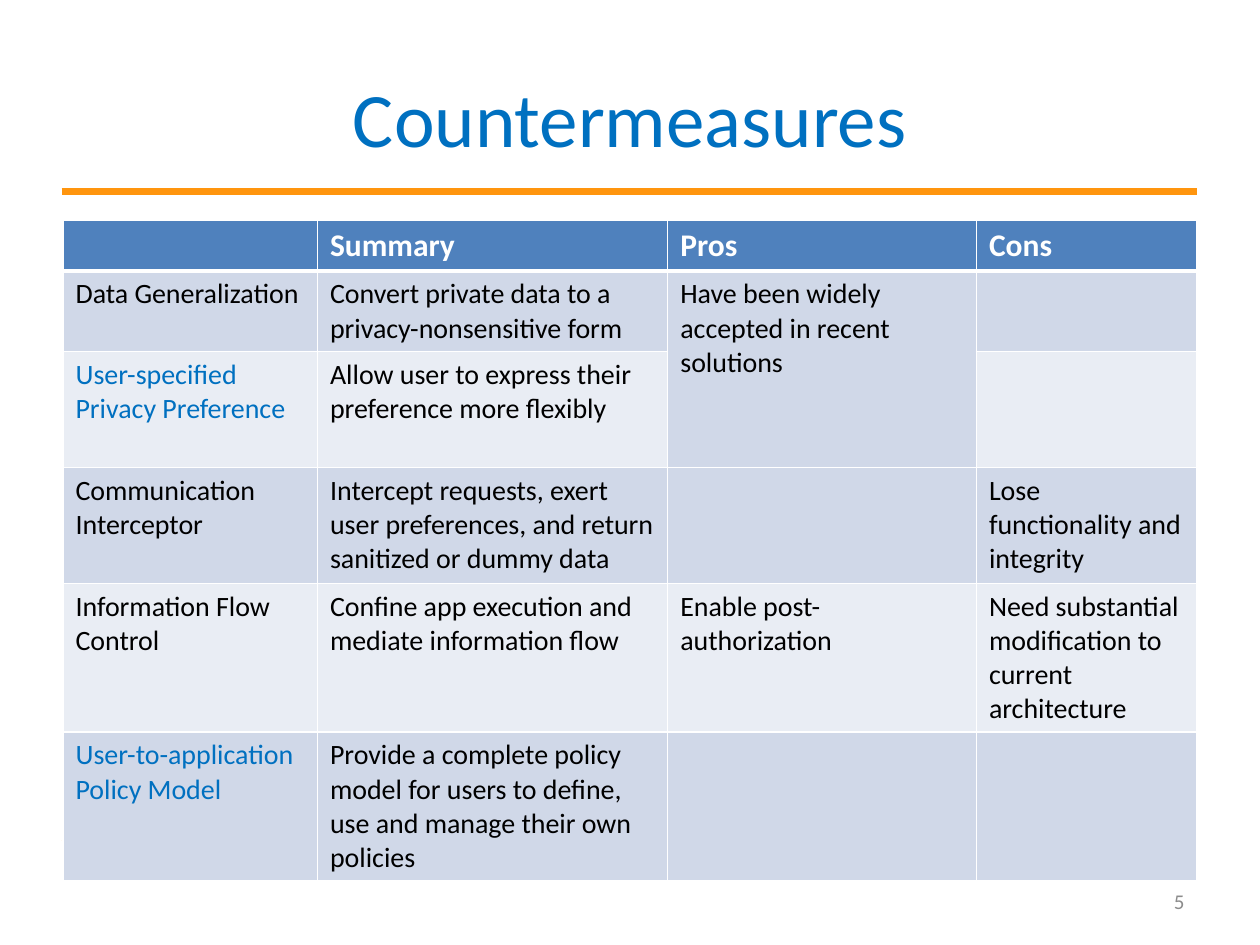
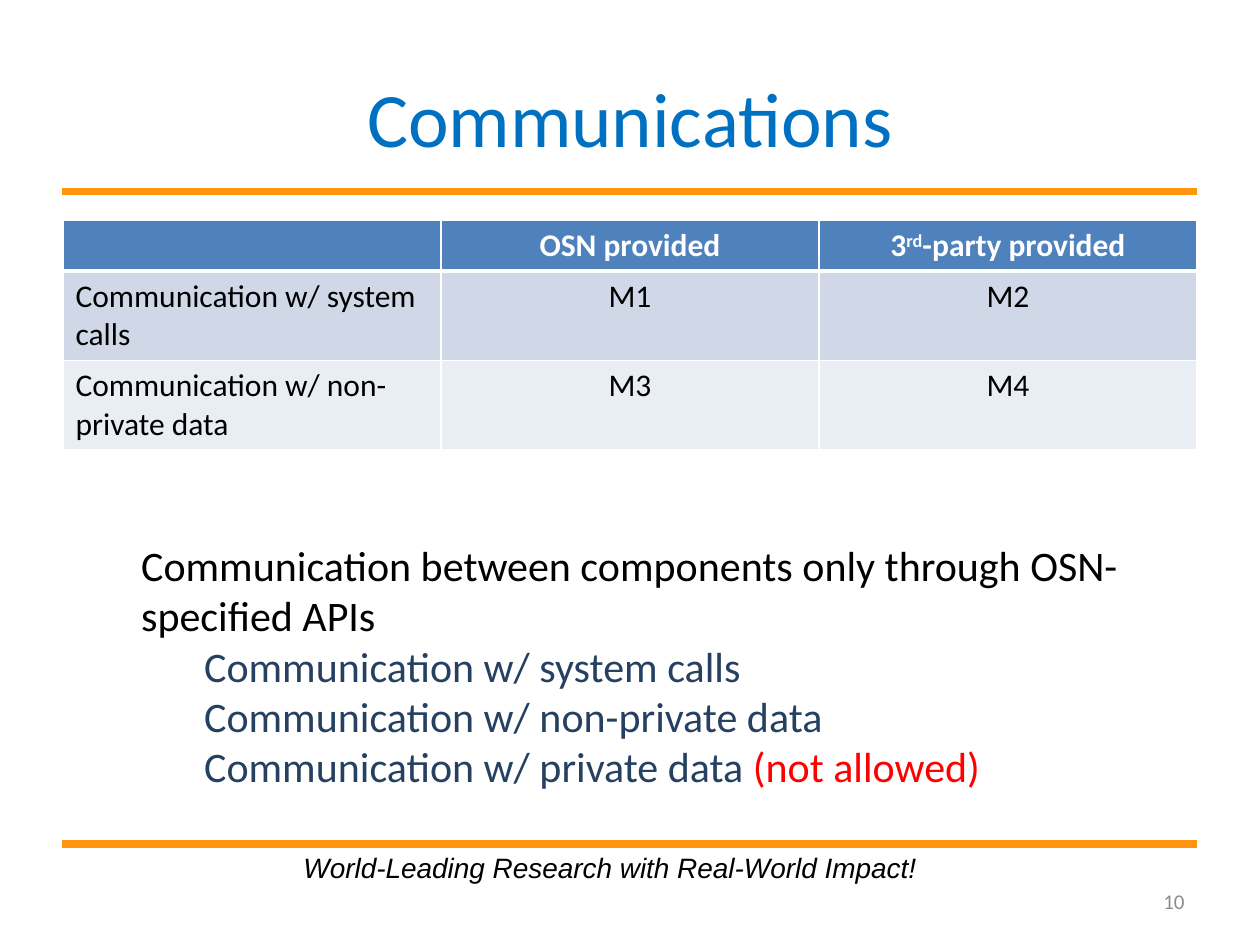
from lxml.etree import SubElement
from pptx import Presentation
from pptx.dml.color import RGBColor
from pptx.enum.shapes import MSO_CONNECTOR
from pptx.enum.text import MSO_ANCHOR, MSO_AUTO_SIZE, PP_ALIGN
from pptx.oxml.ns import qn
from pptx.util import Inches, Pt

WHITE = RGBColor(0xFF, 0xFF, 0xFF)
BLACK = RGBColor(0, 0, 0)
BLUE = RGBColor(0x00, 0x70, 0xC0)
NAVY = RGBColor(0x25, 0x40, 0x61)
RED = RGBColor(0xFF, 0, 0)
ORANGE = RGBColor(0xFF, 0x95, 0x0E)
GREY = RGBColor(0x8C, 0x8C, 0x8C)
HEADER_FILL = RGBColor(0x4F, 0x81, 0xBD)
BAND_FILLS = (RGBColor(0xD0, 0xD8, 0xE8), RGBColor(0xE9, 0xED, 0xF4))

FONT = "Calibri"
MARGIN, CONTENT_WIDTH = 0.5, 9
TABLE_TOP = 1.75
RULE_LEFT, RULE_RIGHT = 0.49, 9.5
TITLE_RULE, FOOTER_RULE = 1.52, 6.7
TITLE_ONLY, TITLE_AND_CONTENT = 5, 1

COUNTERMEASURES = [
    ["", "Summary", "Pros", "Cons"],
    ["Data Generalization", "Convert private data to a privacy-nonsensitive form",
     "Have been widely accepted in recent solutions", ""],
    [("User-specified Privacy Preference", BLUE),
     "Allow user to express their preference more flexibly", "", ""],
    ["Communication Interceptor",
     "Intercept requests, exert user preferences, and return sanitized or dummy data",
     "", "Lose functionality and integrity"],
    ["Information Flow Control", "Confine app execution and mediate information flow",
     "Enable post-authorization", "Need substantial modification to current architecture"],
    [("User-to-application Policy Model", BLUE),
     "Provide a complete policy model for users to define, use and manage their own policies",
     "", ""],
]
COMMUNICATIONS = [
    ["", "OSN provided", "3^rd^-party provided"],
    ["Communication w/ system calls", "M1", "M2"],
    ["Communication w/ non-private data", "M3", "M4"],
]
RULES_OF_COMMUNICATION = [
    (0, [("Communication between components only through OSN-specified APIs", BLACK)]),
    (1, [("Communication w/ system calls", NAVY)]),
    (1, [("Communication w/ non-private data", NAVY)]),
    (1, [("Communication w/ private data ", NAVY), ("(not allowed)", RED)]),
]


def place(shape, left, top, width, height):
    shape.left, shape.top = Inches(left), Inches(top)
    shape.width, shape.height = Inches(width), Inches(height)


def write(paragraph, runs, size, align=PP_ALIGN.LEFT, name=FONT, bold=False, italic=False):
    """Fill a paragraph with (text, colour) runs; text between ^ marks is raised."""
    paragraph.alignment = align
    font = paragraph.font
    font.name, font.size, font.bold, font.italic = name, Pt(size), bold, italic
    for text, colour in runs:
        for index, part in enumerate(text.split("^")):
            run = paragraph.add_run()
            run.text = part
            run.font.color.rgb = colour
            if index % 2:
                run._r.get_or_add_rPr().set("baseline", "30000")


def add_rule(slide, height):
    rule = slide.shapes.add_connector(
        MSO_CONNECTOR.STRAIGHT, Inches(RULE_LEFT), Inches(height),
        Inches(RULE_RIGHT), Inches(height))
    rule.line.color.rgb = ORANGE
    rule.line.width = Pt(4.31)
    SubElement(rule._element.spPr, qn("a:effectLst"))


def add_text(slide, area, text, size, colour, **style):
    box = slide.shapes.add_textbox(0, 0, 0, 0)
    place(box, *area)
    write(box.text_frame.paragraphs[0], [(text, colour)], size, **style)
    return box.text_frame


def add_framed_slide(presentation, layout, title, number):
    """Add a slide with its title, both orange rules and its number."""
    slide = presentation.slides.add_slide(presentation.slide_layouts[layout])
    add_rule(slide, TITLE_RULE)
    add_rule(slide, FOOTER_RULE)
    heading = slide.shapes.title
    place(heading, MARGIN, 0.3, CONTENT_WIDTH, 1.25)
    heading.text_frame.vertical_anchor = MSO_ANCHOR.MIDDLE
    write(heading.text_frame.paragraphs[0], [(title, BLUE)], 44, PP_ALIGN.CENTER)
    frame = add_text(slide, (7.17, 6.95, 2.33, 0.4), str(number), 12, GREY,
                     align=PP_ALIGN.RIGHT)
    frame.word_wrap = True
    frame.vertical_anchor = MSO_ANCHOR.MIDDLE
    return slide


def set_borders(cell, top, bottom):
    """Draw white borders; they must precede the fill in the cell's XML."""
    properties = cell._tc.get_or_add_tcPr()
    for side, points in (("L", 1), ("R", 1), ("T", top), ("B", bottom)):
        line = SubElement(properties, qn(f"a:ln{side}"), w=str(Pt(points)))
        fill = SubElement(line, qn("a:solidFill"))
        SubElement(fill, qn("a:srgbClr"), val=str(WHITE))


def add_banded_table(slide, rows, widths, heights, body_size, value_align=PP_ALIGN.LEFT):
    table = slide.shapes.add_table(
        len(rows), len(widths), Inches(MARGIN), Inches(TABLE_TOP),
        Inches(sum(widths)), Inches(sum(heights))).table
    for column, width in zip(table.columns, widths):
        column.width = Inches(width)
    for row_index, (row, height) in enumerate(zip(rows, heights)):
        table.rows[row_index].height = Inches(height)
        is_header = row_index == 0
        for column_index, content in enumerate(row):
            cell = table.cell(row_index, column_index)
            set_borders(cell, 3 if row_index == 1 else 1, 3 if is_header else 1)
            cell.fill.solid()
            cell.fill.fore_color.rgb = HEADER_FILL if is_header else BAND_FILLS[(row_index - 1) % 2]
            if not content:
                continue
            if isinstance(content, str):
                content = (content, WHITE if is_header else BLACK)
            write(cell.text_frame.paragraphs[0], [content],
                  18 if is_header else body_size,
                  value_align if column_index else PP_ALIGN.LEFT, bold=is_header)
    return table


def fill_list(placeholder, area, items):
    place(placeholder, *area)
    frame = placeholder.text_frame
    frame.word_wrap = True
    frame.auto_size = MSO_AUTO_SIZE.SHAPE_TO_FIT_TEXT
    for index, (level, runs) in enumerate(items):
        paragraph = frame.add_paragraph() if index else frame.paragraphs[0]
        paragraph.level = level
        properties = paragraph._p.get_or_add_pPr()
        properties.set("marL", str(Inches(0.5 * level)))
        properties.set("indent", "0")
        SubElement(properties, qn("a:buNone"))
        paragraph.space_before = Pt(0)
        write(paragraph, runs, 24)


def build_countermeasures(presentation):
    slide = add_framed_slide(presentation, TITLE_ONLY, "Countermeasures", 5)
    table = add_banded_table(slide, COUNTERMEASURES, [2.02, 2.78, 2.45, 1.75],
                             [0.4, 0.64, 0.92, 0.92, 1.18, 1.18], 16)
    table.cell(1, 2).merge(table.cell(2, 2))


def build_communications(presentation):
    slide = add_framed_slide(presentation, TITLE_AND_CONTENT, "Communications", 10)
    add_banded_table(slide, COMMUNICATIONS, [CONTENT_WIDTH / 3] * 3,
                     [0.4, 0.71, 0.71], 18, PP_ALIGN.CENTER)
    fill_list(slide.placeholders[1], (1.02, 4.23, 8.07, 2.12), RULES_OF_COMMUNICATION)
    motto = add_text(slide, (2.31, FOOTER_RULE, 5.08, 0.37),
                     "World-Leading Research with Real-World Impact!", 16, BLACK,
                     name="Arial", italic=True)
    motto.word_wrap = False
    motto.auto_size = MSO_AUTO_SIZE.SHAPE_TO_FIT_TEXT


def main():
    presentation = Presentation()
    presentation.slide_width, presentation.slide_height = Inches(10), Inches(7.5)
    build_countermeasures(presentation)
    build_communications(presentation)
    presentation.save("out.pptx")


if __name__ == "__main__":
    main()
